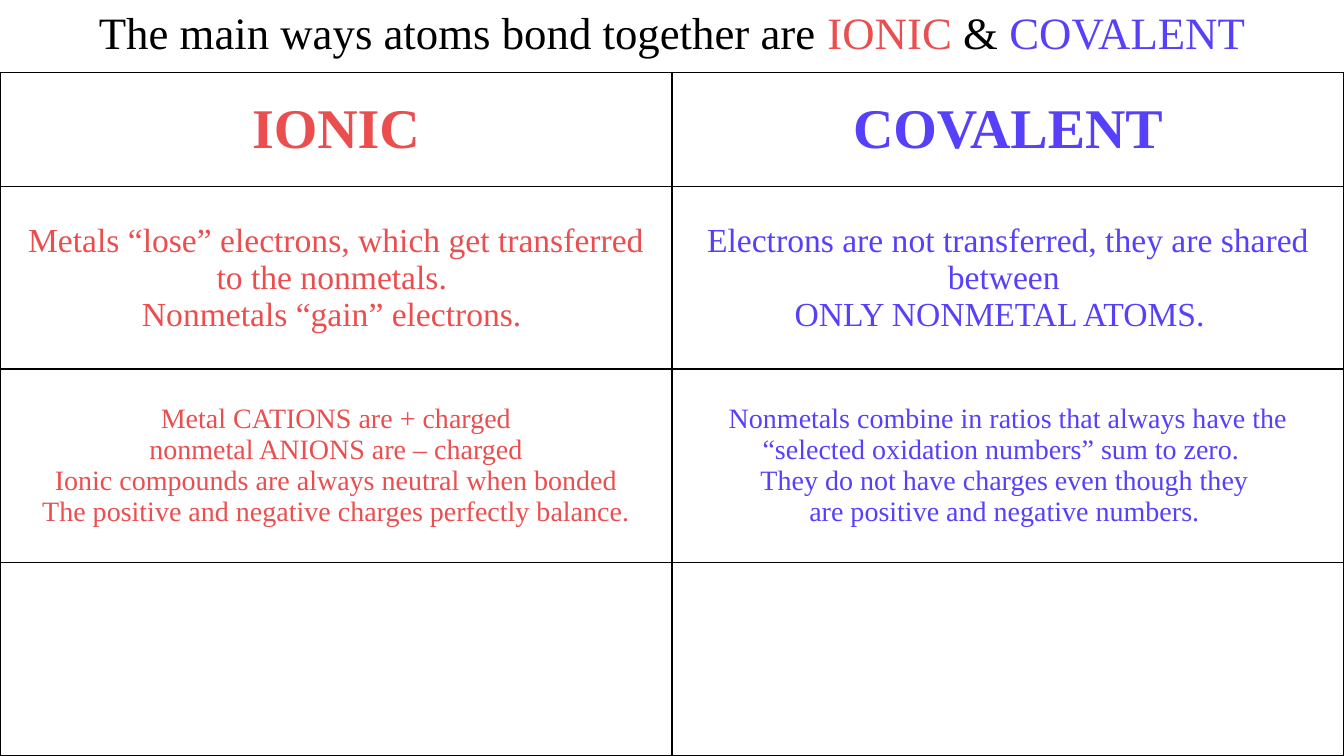
from pptx import Presentation
from pptx.dml.color import RGBColor as Rgb
from pptx.enum.text import MSO_ANCHOR as Anchor, PP_ALIGN as Align
from pptx.oxml import parse_xml
from pptx.oxml.ns import nsdecls
from pptx.util import Pt

WIDE, HIGH = 960, 540
FONT = "Times New Roman"
BLACK, RED, BLUE = "000000", "EB4E4F", "5640FA"
ROWS = [81.4, 130.3, 138.2, 138.2]
SIZES = [40, 24, 20]
# Each column: colour, then one list of paragraphs per row
COLS = [
    (RED, [
        ["IONIC"],
        ["Metals “lose” electrons, which get transferred\nto the nonmetals. ",
         "Nonmetals “gain” electrons. "],
        ["Metal CATIONS are + charged",
         "nonmetal ANIONS are – charged\n"
         "Ionic compounds are always neutral when bonded\n"
         "The positive and negative charges perfectly balance."],
    ]),
    (BLUE, [
        ["COVALENT"],
        ["Electrons are not transferred, they are shared between \n"
         "ONLY NONMETAL ATOMS.  "],
        ["Nonmetals combine in ratios that always have the "
         "“selected oxidation numbers” sum to zero.  \n"
         "They do not have charges even though they \n"
         "are positive and negative numbers. "],
    ]),
]


def paint(code):
    return Rgb.from_string(code)


def write(para, text, size=20, color=BLACK, bold=False):
    para.alignment = Align.CENTER
    for i, line in enumerate(text.split("\n")):
        if i:
            para.add_line_break()
        run = para.add_run()
        run.text = line
        font = run.font
        font.name, font.size, font.bold = FONT, Pt(size), bold
        font.color.rgb = paint(color)


def border(cell, color=BLACK, width=1):
    props = cell._tc.get_or_add_tcPr()
    for i, side in enumerate("LRTB"):
        props.insert(i, parse_xml(
            f'<a:ln{side} {nsdecls("a")} w="{Pt(width)}"><a:solidFill>'
            f'<a:srgbClr val="{color}"/></a:solidFill></a:ln{side}>'))


def title(slide, left, top, width, height):
    box = slide.shapes.add_textbox(Pt(left), Pt(top), Pt(width), Pt(height))
    frame = box.text_frame
    frame.word_wrap = True
    parts = [("The main ways atoms bond together are ", BLACK),
             ("IONIC", RED), (" & ", BLACK), ("COVALENT", BLUE)]
    for text, color in parts:
        write(frame.paragraphs[0], text, size=32, color=color)


def grid(slide, left, top, width, height):
    table = slide.shapes.add_table(len(ROWS), len(COLS), Pt(left), Pt(top),
                                   Pt(width), Pt(height)).table
    table.first_row = table.horz_banding = False
    for row, tall in zip(table.rows, ROWS):
        row.height = Pt(tall)
    for col in table.columns:
        col.width = Pt(width / len(COLS))
    # Plain ruled cells
    for cell in table.iter_cells():
        border(cell)
        cell.fill.background()
        cell.vertical_anchor = Anchor.MIDDLE
    # Wording, with a bold heading row
    for c, (color, texts) in enumerate(COLS):
        for r, (paras, size) in enumerate(zip(texts, SIZES)):
            frame = table.cell(r, c).text_frame
            for i, text in enumerate(paras):
                para = frame.add_paragraph() if i else frame.paragraphs[0]
                write(para, text, size=size, color=color, bold=r == 0)


def main():
    deck = Presentation()
    deck.slide_width, deck.slide_height = Pt(WIDE), Pt(HIGH)
    slide = deck.slides.add_slide(deck.slide_layouts[6])
    title(slide, 0, 0, WIDE, 46)
    tall = sum(ROWS)
    grid(slide, 0, HIGH - tall, WIDE, tall)
    deck.save("out.pptx")


if __name__ == "__main__":
    main()
